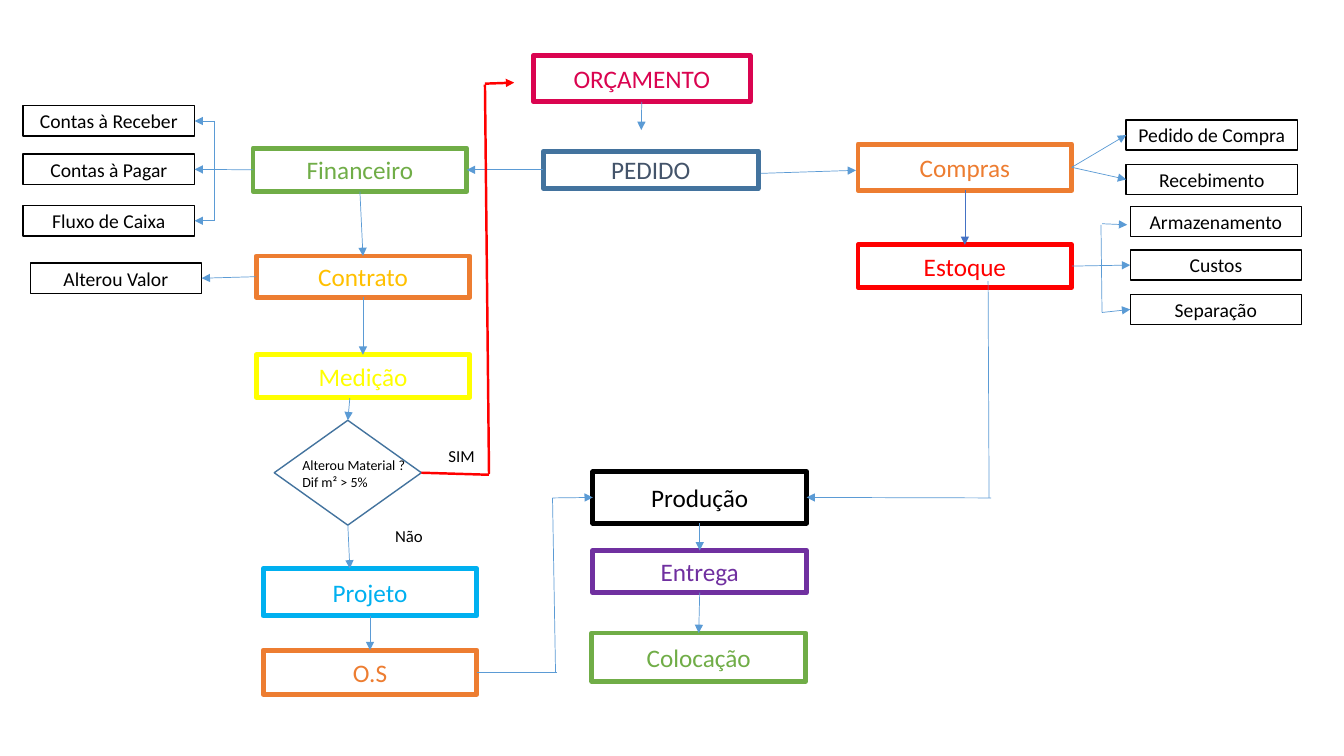
from dataclasses import dataclass
from enum import IntEnum
from typing import Any, Optional, Union

import lxml.etree
import pptx
import pptx.dml.color
import pptx.enum.shapes
import pptx.enum.text
import pptx.oxml.ns
import pptx.util

FONT = "Calibri"
BLACK = "000000"
RED = "FF0000"
ORANGE = "ED7D31"
GREEN = "70AD47"
BLUE = "5B9BD5"
STEEL = "43739E"
STAGE_WIDTH = 2.12
NOTE_WIDTH, NOTE_HEIGHT = 1.7, 0.3
DECISION = "Decisão"


class Side(IntEnum):
    TOP = 0
    LEFT = 1
    BOTTOM = 2
    RIGHT = 3


@dataclass(frozen=True)
class Stage:
    label: str
    left: float
    top: float
    height: float
    colour: str
    width: float = STAGE_WIDTH
    text_colour: Optional[str] = None
    fill: Optional[str] = None


@dataclass(frozen=True)
class Note:
    label: str
    left: float
    top: float


@dataclass(frozen=True)
class Caption:
    lines: tuple[str, ...]
    left: float
    top: float
    width: float
    height: float
    size: float


@dataclass(frozen=True)
class Joint:
    label: str
    side: Side


End = Union[Joint, tuple[float, float]]


@dataclass(frozen=True)
class Flow:
    start: End
    finish: End
    arrow: bool = True
    colour: str = BLUE
    weight: float = 0.5


STAGES = [
    Stage("ORÇAMENTO", 5.29, 0.55, 0.46, "DA0450", width=2.15),
    Stage("PEDIDO", 5.39, 1.5, 0.37, STEEL, width=2.13, text_colour="44546A", fill="FFFFFF"),
    Stage("Financeiro", 2.51, 1.47, 0.43, GREEN),
    Stage("Contrato", 2.54, 2.54, 0.41, ORANGE, text_colour="FFC000"),
    Stage("Medição", 2.54, 3.52, 0.42, "FFFF00"),
    Stage("Projeto", 2.61, 5.64, 0.47, "00B0F0"),
    Stage("O.S", 2.61, 6.45, 0.44, ORANGE),
    Stage("Produção", 5.88, 4.68, 0.51, BLACK),
    Stage("Entrega", 5.88, 5.46, 0.42, "7030A0"),
    Stage("Colocação", 5.87, 6.28, 0.48, GREEN),
    Stage("Compras", 8.51, 1.43, 0.46, ORANGE),
    Stage("Estoque", 8.51, 2.43, 0.42, RED),
]

NOTES = [
    Note("Contas à Receber", 0.23, 1.05),
    Note("Contas à Pagar", 0.23, 1.53),
    Note("Fluxo de Caixa", 0.23, 2.04),
    Note("Alterou Valor", 0.3, 2.61),
    Note("Pedido de Compra", 11.17, 1.19),
    Note("Recebimento", 11.17, 1.63),
    Note("Armazenamento", 11.21, 2.05),
    Note("Custos", 11.21, 2.48),
    Note("Separação", 11.21, 2.92),
]

CAPTIONS = [
    Caption(("Alterou Material ?", "Dif m² > 5%"), 2.9, 4.48, 1.29, 0.44, 10),
    Caption(("SIM",), 4.35, 4.37, 0.57, 0.3, 12),
    Caption(("Não",), 3.82, 5.17, 0.61, 0.3, 12),
]

FLOWS = [
    Flow(Joint("ORÇAMENTO", Side.BOTTOM), (6.36, 1.29)),
    Flow(Joint("PEDIDO", Side.LEFT), Joint("Financeiro", Side.RIGHT)),
    Flow((7.55, 1.72), (8.49, 1.69)),
    Flow((2.13, 1.2), (2.13, 2.19), arrow=False),
    Flow((2.13, 1.2), Joint("Contas à Receber", Side.RIGHT)),
    Flow(Joint("Financeiro", Side.LEFT), Joint("Contas à Pagar", Side.RIGHT)),
    Flow((2.13, 2.19), Joint("Fluxo de Caixa", Side.RIGHT)),
    Flow(Joint("Financeiro", Side.BOTTOM), Joint("Contrato", Side.TOP)),
    Flow(Joint("Contrato", Side.LEFT), Joint("Alterou Valor", Side.RIGHT)),
    Flow(Joint("Contrato", Side.BOTTOM), Joint("Medição", Side.TOP)),
    Flow((3.47, 3.95), Joint(DECISION, Side.TOP)),
    Flow(Joint(DECISION, Side.BOTTOM), (3.47, 5.64)),
    Flow(Joint(DECISION, Side.RIGHT), (4.85, 4.71), False, RED, 1.75),
    Flow((4.85, 4.7), (4.81, 0.84), False, RED, 1.75),
    Flow((4.81, 0.83), (5.1, 0.82), True, RED, 1.75),
    Flow(Joint("Projeto", Side.BOTTOM), Joint("O.S", Side.TOP)),
    Flow(Joint("O.S", Side.RIGHT), (5.52, 6.67), arrow=False),
    Flow((5.51, 6.67), (5.48, 4.94), arrow=False),
    Flow((5.48, 4.94), Joint("Produção", Side.LEFT)),
    Flow(Joint("Produção", Side.BOTTOM), Joint("Entrega", Side.TOP)),
    Flow(Joint("Entrega", Side.BOTTOM), Joint("Colocação", Side.TOP)),
    Flow(Joint("Compras", Side.BOTTOM), Joint("Estoque", Side.TOP), colour="4472C4"),
    Flow(Joint("Compras", Side.RIGHT), Joint("Pedido de Compra", Side.LEFT)),
    Flow(Joint("Compras", Side.RIGHT), Joint("Recebimento", Side.LEFT)),
    Flow(Joint("Estoque", Side.RIGHT), Joint("Custos", Side.LEFT)),
    Flow((10.93, 3.1), (10.92, 2.23), arrow=False),
    Flow((10.93, 2.22), (11.18, 2.23)),
    Flow((10.93, 3.1), Joint("Separação", Side.LEFT)),
    Flow((9.8, 2.79), (9.81, 4.94), arrow=False),
    Flow((9.83, 4.94), Joint("Produção", Side.RIGHT)),
]


def rgb(colour: str) -> pptx.dml.color.RGBColor:
    return pptx.dml.color.RGBColor.from_string(colour)


def add_span(para: Any, text: str, size: float, colour: str) -> None:
    span = para.add_run()
    span.text = text
    span.font.name = FONT
    span.font.size = pptx.util.Pt(size)
    span.font.color.rgb = rgb(colour)


def add_outline(page: Any, kind: Any, area: tuple[float, float, float, float],
                colour: str, weight: float, fill: Optional[str] = None) -> Any:
    box = page.shapes.add_shape(kind, *map(pptx.util.Inches, area))
    box.shadow.inherit = False
    if fill:
        box.fill.solid()
        box.fill.fore_color.rgb = rgb(fill)
    else:
        box.fill.background()
    box.line.color.rgb = rgb(colour)
    box.line.width = pptx.util.Pt(weight)
    return box


def add_label(box: Any, text: str, size: float, colour: str) -> None:
    box.text_frame.word_wrap = True
    box.text_frame.vertical_anchor = pptx.enum.text.MSO_ANCHOR.MIDDLE
    para = box.text_frame.paragraphs[0]
    para.alignment = pptx.enum.text.PP_ALIGN.CENTER
    add_span(para, text, size, colour)


def add_caption(page: Any, caption: Caption) -> None:
    area = (caption.left, caption.top, caption.width, caption.height)
    frame = page.shapes.add_textbox(*map(pptx.util.Inches, area)).text_frame
    frame.word_wrap = True
    for index, line in enumerate(caption.lines):
        para = frame.add_paragraph() if index else frame.paragraphs[0]
        add_span(para, line, caption.size, BLACK)


def add_flow(page: Any, flow: Flow, boxes: dict[str, Any]) -> None:
    points = [(0, 0) if isinstance(end, Joint) else end for end in (flow.start, flow.finish)]
    line = page.shapes.add_connector(
        pptx.enum.shapes.MSO_CONNECTOR.STRAIGHT,
        *(pptx.util.Inches(value) for point in points for value in point))
    for end, connect in ((flow.start, line.begin_connect), (flow.finish, line.end_connect)):
        if isinstance(end, Joint):
            connect(boxes[end.label], int(end.side))
    line.line.color.rgb = rgb(flow.colour)
    line.line.width = pptx.util.Pt(flow.weight)
    properties = line._element.spPr
    if flow.arrow:
        outline = properties.find(pptx.oxml.ns.qn("a:ln"))
        lxml.etree.SubElement(outline, pptx.oxml.ns.qn("a:tailEnd"), type="triangle")
    lxml.etree.SubElement(properties, pptx.oxml.ns.qn("a:effectLst"))


def main() -> None:
    deck = pptx.Presentation()
    deck.slide_width = pptx.util.Inches(13.33)
    deck.slide_height = pptx.util.Inches(7.5)
    page = deck.slides.add_slide(deck.slide_layouts[6])
    kinds = pptx.enum.shapes.MSO_SHAPE
    boxes = {DECISION: add_outline(page, kinds.DIAMOND, (2.72, 4.17, 1.46, 1.04), STEEL, 1)}
    for stage in STAGES:
        area = (stage.left, stage.top, stage.width, stage.height)
        box = add_outline(page, kinds.RECTANGLE, area, stage.colour, 3.5, stage.fill)
        add_label(box, stage.label, 18, stage.text_colour or stage.colour)
        boxes[stage.label] = box
    for note in NOTES:
        area = (note.left, note.top, NOTE_WIDTH, NOTE_HEIGHT)
        box = add_outline(page, kinds.RECTANGLE, area, BLACK, 1)
        add_label(box, note.label, 14, BLACK)
        boxes[note.label] = box
    for flow in FLOWS:
        add_flow(page, flow, boxes)
    for caption in CAPTIONS:
        add_caption(page, caption)
    deck.save("out.pptx")


if __name__ == "__main__":
    main()
